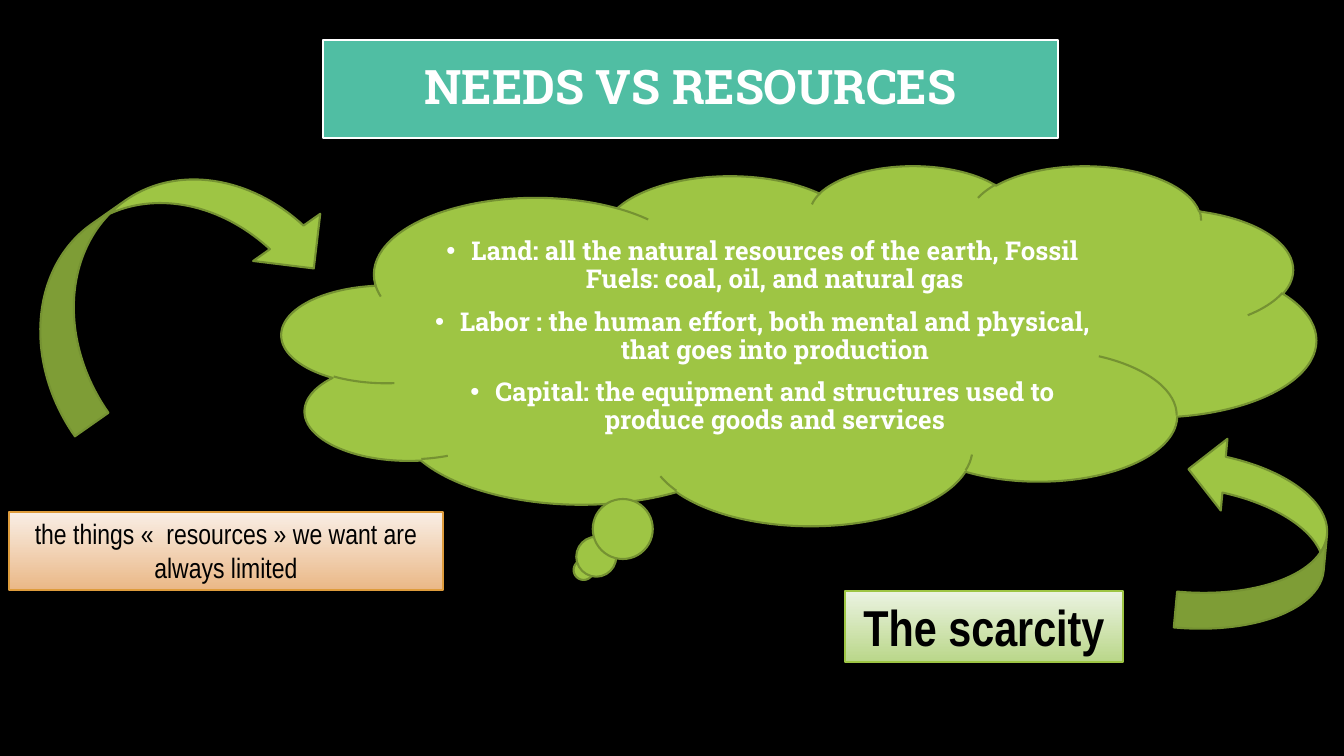
import pptx
import pptx.util
import pptx.dml.color
import pptx.enum.shapes
import pptx.enum.text
import pptx.oxml
import pptx.oxml.ns
from dataclasses import dataclass

SHAPE = pptx.enum.shapes.MSO_SHAPE
ANCHOR = pptx.enum.text.MSO_ANCHOR


@dataclass(frozen=True)
class Theme:
    background: str = "000000"
    light: str = "FFFFFF"
    dark: str = "000000"
    teal: str = "50BEA3"
    green: str = "9EC544"
    green_edge: str = "759232"
    orange_edge: str = "DE9C3C"
    orange_fade: tuple = ("F9EEE5", "EAB887")
    green_fade: tuple = ("EBF3E1", "BAD78A")
    slab: str = "Roboto Slab"
    narrow: str = "Arial Narrow"
    title_size: float = 34
    body_size: float = 18.5
    note_size: float = 20
    scarcity_size: float = 36


THEME = Theme()


def px(n):
    return round(n * 914400 / 100.8)


def rgb(color):
    return pptx.dml.color.RGBColor.from_string(color)


def add_shape(slide, kind, box, fill, edge, width, rotation=0):
    s = slide.shapes.add_shape(kind, *map(px, box))
    s.shadow.inherit = False
    s.rotation = rotation
    if isinstance(fill, tuple):
        s.fill.gradient()
        s.fill.gradient_angle = 270
        for stop, color in zip(s.fill.gradient_stops, fill):
            stop.color.rgb = rgb(color)
    else:
        s.fill.solid()
        s.fill.fore_color.rgb = rgb(fill)
    s.line.color.rgb = rgb(edge)
    s.line.width = pptx.util.Pt(width)
    return s


def add_bullet(p, indent):
    pPr = p._p.get_or_add_pPr()
    pPr.set("marL", str(indent))
    pPr.set("indent", str(-indent))
    ns = pptx.oxml.ns.nsdecls("a")
    pPr.append(pptx.oxml.parse_xml(f'<a:buFont {ns} typeface="Arial"/>'))
    pPr.append(pptx.oxml.parse_xml(f'<a:buChar {ns} char="•"/>'))


def write(s, *texts, size, font, color, bold=False, anchor=ANCHOR.MIDDLE,
          spacing=None, before=None, bullet=False):
    tf = s.text_frame
    tf.word_wrap = True
    tf.vertical_anchor = anchor
    for i, text in enumerate(texts):
        p = tf.add_paragraph() if i else tf.paragraphs[0]
        p.alignment = pptx.enum.text.PP_ALIGN.CENTER
        p.line_spacing = spacing
        p.space_before = before
        if bullet:
            add_bullet(p, px(25))
        r = p.add_run()
        r.text = text
        r.font.size = pptx.util.Pt(size)
        r.font.name = font
        r.font.bold = bold
        r.font.color.rgb = rgb(color)


def add_title(slide, box, text):
    s = add_shape(slide, SHAPE.RECTANGLE, box, THEME.teal, THEME.light, 2)
    write(s, text, size=THEME.title_size, font=THEME.slab, color=THEME.light,
          bold=True, spacing=0.9)


def add_cloud(slide, box, resources):
    s = add_shape(slide, SHAPE.CLOUD_CALLOUT, box, THEME.green, THEME.green_edge, 1.5)
    write(s, *resources, size=THEME.body_size, font=THEME.slab, color=THEME.light,
          bold=True, spacing=0.9, before=pptx.util.Pt(10), bullet=True)


def add_label(slide, box, text, fade, edge, size, bold=False):
    s = add_shape(slide, SHAPE.RECTANGLE, box, fade, edge, 1)
    write(s, text, size=size, font=THEME.narrow, color=THEME.dark, bold=bold,
          anchor=ANCHOR.TOP)


def add_curved_arrow(slide, kind, box, rotation):
    add_shape(slide, kind, box, THEME.green, THEME.green_edge, 1.5, rotation)


def main():
    prs = pptx.Presentation()
    prs.slide_width, prs.slide_height = px(1344), px(756)
    slide = prs.slides.add_slide(prs.slide_layouts[6])
    slide.background.fill.solid()
    slide.background.fill.fore_color.rgb = rgb(THEME.background)

    add_title(slide, (323, 40, 735, 98), "NEEDS VS RESOURCES")
    add_cloud(slide, (282, 165, 1034, 360), (
        "Land: all the natural resources of the earth, Fossil Fuels: coal, oil, and natural gas",
        "Labor : the human effort, both mental and physical, that goes into production",
        "Capital: the equipment and structures used to produce goods and services",
    ))
    add_label(slide, (9, 512, 434, 78),
              "the things «  resources » we want are always limited",
              THEME.orange_fade, THEME.orange_edge, THEME.note_size)
    add_curved_arrow(slide, SHAPE.CURVED_LEFT_ARROW, (82, 107, 164, 333), 234.9)
    add_label(slide, (845, 591, 278, 71), "The scarcity",
              THEME.green_fade, THEME.green, THEME.scarcity_size, bold=True)
    add_curved_arrow(slide, SHAPE.CURVED_UP_ARROW, (1157, 465, 195, 144), 275.3)

    prs.save("out.pptx")


if __name__ == "__main__":
    main()
